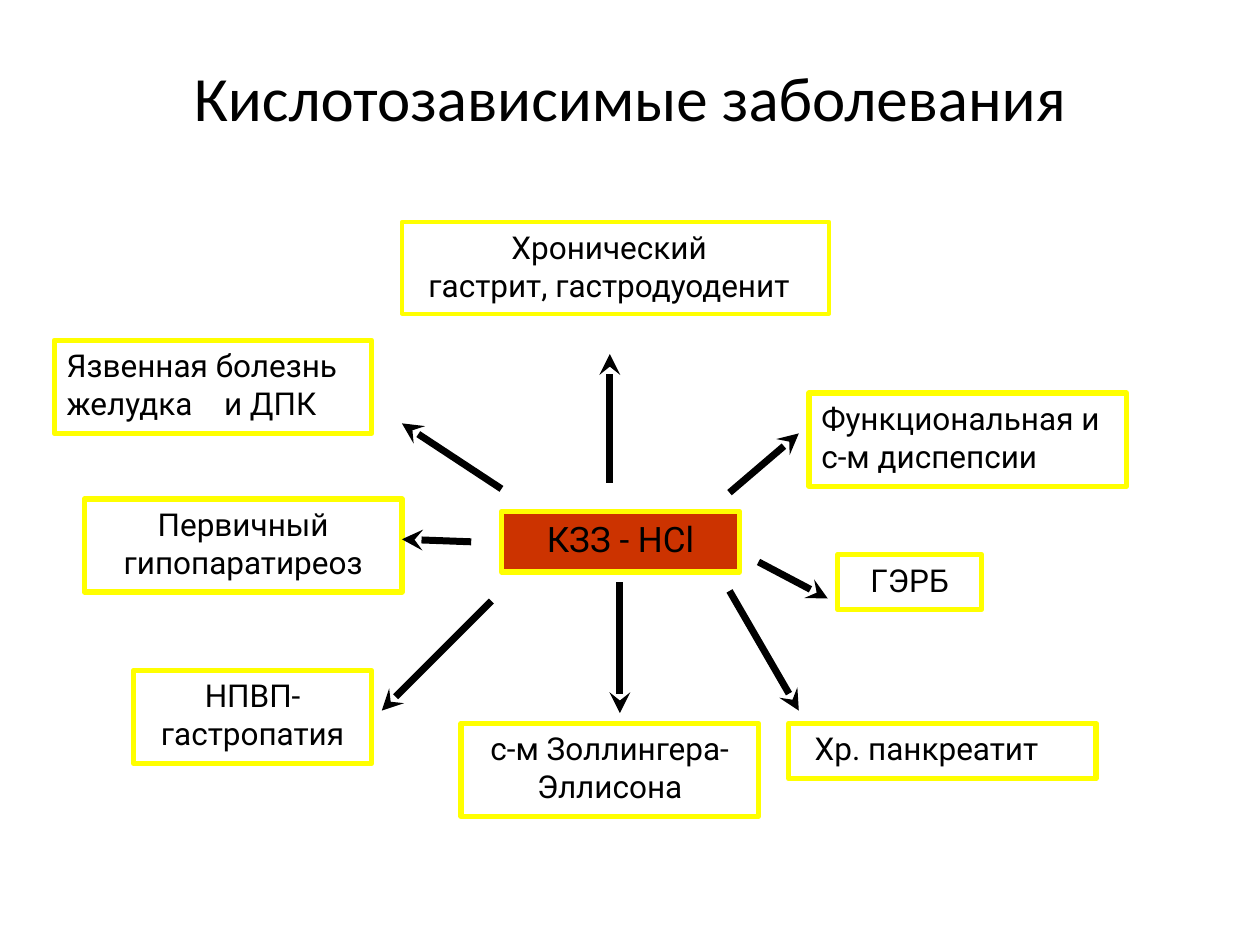
from dataclasses import dataclass

from lxml.etree import SubElement
from pptx import Presentation
from pptx.dml.color import RGBColor
from pptx.enum.shapes import MSO_CONNECTOR, MSO_SHAPE
from pptx.enum.text import MSO_ANCHOR, MSO_AUTO_SIZE, PP_ALIGN
from pptx.oxml.ns import qn
from pptx.util import Pt

PX = 9144  # 100 px to the inch
LEFT, CENTER = PP_ALIGN.LEFT, PP_ALIGN.CENTER


@dataclass(frozen=True)
class Theme:
    ink: RGBColor = RGBColor(0, 0, 0)
    frame: RGBColor = RGBColor(0xFF, 0xFF, 0)
    core: RGBColor = RGBColor(0xCC, 0x33, 0)
    title_font: str = "Calibri"
    label_font: str = "Roboto"
    title_size: float = 36
    core_size: float = 20
    label_size: float = 18
    frame_width: float = 3
    thin_frame: float = 2.25
    arrow_width: float = 4


THEME = Theme()


@dataclass(frozen=True)
class Disease:
    text: str
    box: tuple
    align: PP_ALIGN = CENTER
    right_inset: int = 10
    frame_width: float = THEME.frame_width
    tab: int = 0


# Boxes are relative to the diagram: left, top, width, height
DISEASES = [
    Disease("Язвенная болезнь желудка\tи ДПК", (0, 94, 252, 74), LEFT, tab=125),
    Disease("Функциональная и с-м диспепсии", (599, 136, 252, 74), LEFT),
    Disease("Хронический\nгастрит, гастродуоденит", (276, 0, 339, 73),
            right_inset=20, frame_width=THEME.thin_frame),
    Disease("НПВП-гастропатия", (63, 356, 189, 74)),
    Disease("Хр. панкреатит", (583, 398, 244, 44), right_inset=35),
    Disease("Первичный\nгипопаратиреоз", (24, 220, 252, 74)),
    Disease("с-м Золлингера-\nЭллисона", (323, 398, 236, 74)),
    Disease("ГЭРБ", (622, 264, 114, 44)),
]
CORE_BOX = (355, 230, 189, 48)

# Arrows relative to the diagram: start x, y, end x, y
ARROWS = [
    (331, 254, 276, 252),
    (355, 212, 276, 160),
    (441, 207, 441, 105),
    (347, 301, 260, 388),
    (449, 286, 449, 390),
    (536, 293, 591, 388),
    (536, 215, 591, 168),
    (559, 270, 614, 299),
]


def style_text(para, font_name, size, align):
    para.alignment = align
    para.font.name = font_name
    para.font.size = Pt(size)
    para.font.color.rgb = THEME.ink


def add_title(page, box, text):
    title = page.shapes.title
    title.left, title.top, title.width, title.height = (n * PX for n in box)
    title.text_frame.text = text
    title.text_frame.vertical_anchor = MSO_ANCHOR.MIDDLE
    style_text(title.text_frame.paragraphs[0], THEME.title_font,
               THEME.title_size, CENTER)


def add_label(page, origin, disease, size=THEME.label_size, fill=None):
    left, top, width, height = disease.box
    shape = page.shapes.add_shape(
        MSO_SHAPE.RECTANGLE, (origin[0] + left) * PX, (origin[1] + top) * PX,
        width * PX, height * PX)
    shape.shadow.inherit = False
    shape.line.color.rgb = THEME.frame
    shape.line.width = Pt(disease.frame_width)
    if fill is None:
        shape.fill.background()
    else:
        shape.fill.solid()
        shape.fill.fore_color.rgb = fill

    frame = shape.text_frame
    frame.text = disease.text
    frame.word_wrap = True
    frame.auto_size = MSO_AUTO_SIZE.SHAPE_TO_FIT_TEXT
    frame.vertical_anchor = MSO_ANCHOR.TOP
    frame.margin_left, frame.margin_right = 10 * PX, disease.right_inset * PX
    frame.margin_top = frame.margin_bottom = 5 * PX
    for para in frame.paragraphs:
        style_text(para, THEME.label_font, size, disease.align)
        if disease.tab:
            add_tab_stop(para, disease.tab)


def add_tab_stop(para, position):
    properties = para._p.get_or_add_pPr()
    stops = properties.makeelement(qn("a:tabLst"), {})
    SubElement(stops, qn("a:tab"), pos=str(position * PX), algn="l")
    # The schema wants tab stops ahead of the default run properties
    properties.find(qn("a:defRPr")).addprevious(stops)


def add_arrow(page, origin, ends):
    points = [(n + origin[i % 2]) * PX for i, n in enumerate(ends)]
    arrow = page.shapes.add_connector(MSO_CONNECTOR.STRAIGHT, *points)
    arrow.line.color.rgb = THEME.ink
    arrow.line.width = Pt(THEME.arrow_width)
    SubElement(arrow.line._get_or_add_ln(), qn("a:tailEnd"), type="stealth")
    SubElement(arrow._element.spPr, qn("a:effectLst"))


def add_diagram(page, origin):
    # Common cause in the middle
    add_label(page, origin, Disease("КЗЗ - НCl", CORE_BOX),
              THEME.core_size, THEME.core)
    # Diseases around it
    for disease in DISEASES:
        add_label(page, origin, disease)
    # Arrows from the cause outwards
    for ends in ARROWS:
        add_arrow(page, origin, ends)


def main():
    deck = Presentation()
    deck.slide_width, deck.slide_height = 1000 * PX, 750 * PX
    page = deck.slides.add_slide(deck.slide_layouts[5])
    add_title(page, (0, 30, 1000, 93), "Кислотозависимые заболевания")
    add_diagram(page, (43, 176))
    deck.save("out.pptx")


if __name__ == "__main__":
    main()
